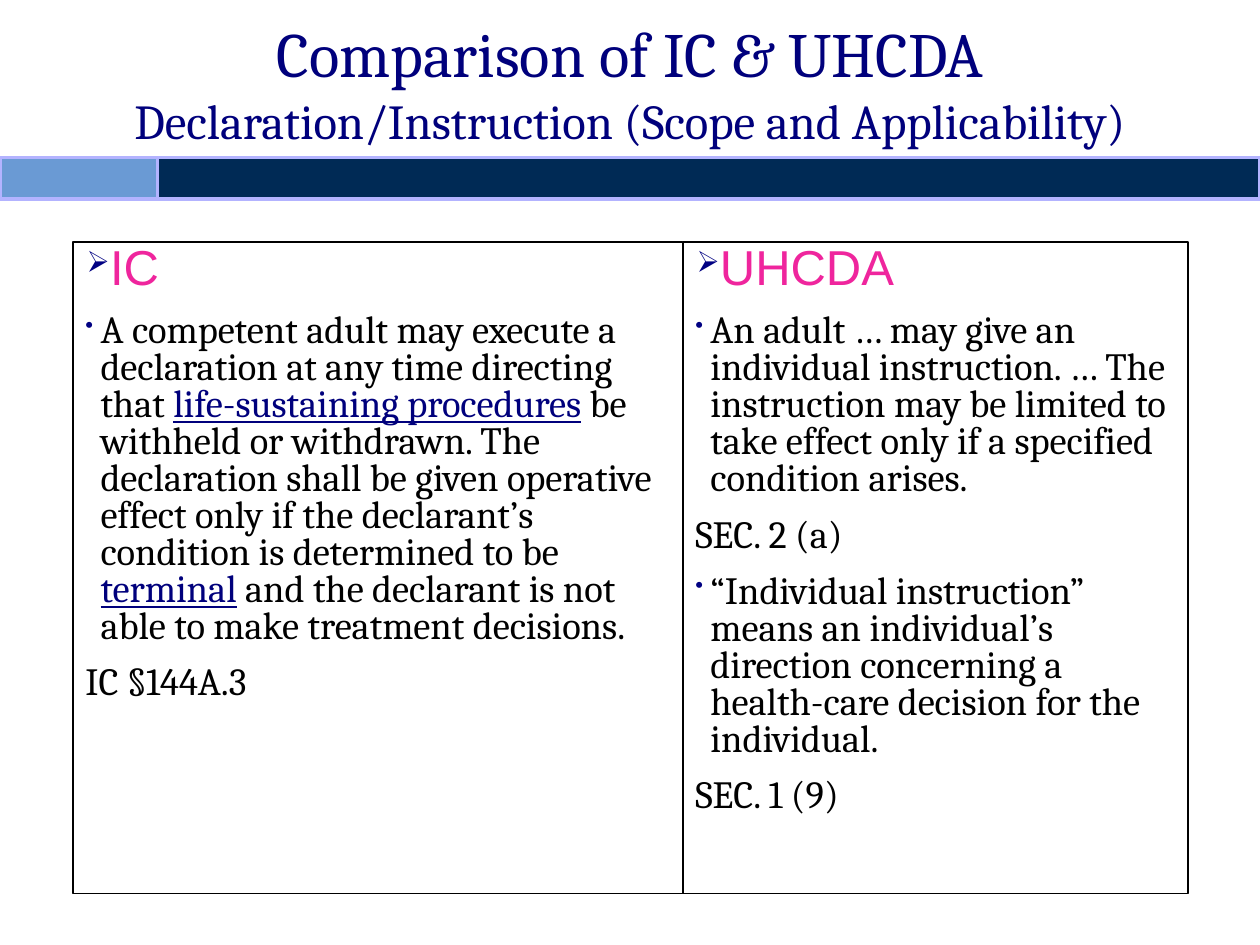
from dataclasses import dataclass
from lxml.etree import SubElement
from pptx import Presentation
from pptx.dml.color import RGBColor
from pptx.enum.shapes import MSO_SHAPE
from pptx.enum.text import MSO_ANCHOR, PP_ALIGN
from pptx.oxml.ns import qn
from pptx.util import Inches, Pt


@dataclass(frozen=True)
class Theme:
    serif: str = "Cambria"
    sans: str = "Arial"
    navy: str = "00007C"
    bullet: str = "000082"
    pink: str = "EF259D"
    black: str = "000000"
    white: str = "FFFFFF"
    band_dark: str = "002A55"
    band_light: str = "6A9AD4"
    band_edge: str = "B3B3FF"
    title_size: float = 36
    subtitle_size: float = 27.9
    heading_size: float = 28
    body_size: float = 22
    paragraph_gap: float = 11
    line_spacing: float = 0.8


class SlideBuilder:
    def __init__(self, slide, theme):
        self.slide = slide
        self.theme = theme

    def format_run(self, run, size, color, font, underline=False):
        run.font.size = Pt(size)
        run.font.name = font
        run.font.color.rgb = RGBColor.from_string(color)
        if underline:
            run.font.underline = True

    def title(self, heading, subheading, left, top, width, height):
        theme = self.theme
        title = self.slide.shapes.title
        title.left, title.top = Inches(left), Inches(top)
        title.width, title.height = Inches(width), Inches(height)
        frame = title.text_frame
        frame.word_wrap = True
        frame.vertical_anchor = MSO_ANCHOR.MIDDLE
        frame.margin_top, frame.margin_bottom = Inches(0), Inches(0.43)
        frame.text = f"{heading}\v{subheading}"
        paragraph = frame.paragraphs[0]
        paragraph.alignment = PP_ALIGN.CENTER
        for run, size in zip(paragraph.runs, (theme.title_size, theme.subtitle_size)):
            self.format_run(run, size, theme.navy, theme.serif)

    def box(self, shapes, left, top, width, height, fill, edge, edge_width):
        box = shapes.add_shape(MSO_SHAPE.RECTANGLE, Inches(left), Inches(top),
                               Inches(width), Inches(height))
        box.shadow.inherit = False
        box.fill.solid()
        box.fill.fore_color.rgb = RGBColor.from_string(fill)
        box.line.color.rgb = RGBColor.from_string(edge)
        box.line.width = Pt(edge_width)
        return box

    def band(self, top, height, split, width):
        theme = self.theme
        shapes = self.slide.shapes.add_group_shape().shapes
        for left, right, fill in ((split, width, theme.band_dark),
                                  (0, split, theme.band_light)):
            self.box(shapes, left, top, right - left, height, fill, theme.band_edge, 2)

    def bullet(self, paragraph, symbol, margin, indent):
        properties = paragraph._p.get_or_add_pPr()
        properties.set("marL", str(Inches(margin)))
        properties.set("indent", str(Inches(indent)))
        color = SubElement(properties, qn("a:buClr"))
        SubElement(color, qn("a:srgbClr")).set("val", self.theme.bullet)
        SubElement(properties, qn("a:buSzPct")).set("val", "60000")
        SubElement(properties, qn("a:buChar")).set("char", symbol)

    def column(self, heading, entries, left, top, width, height):
        theme = self.theme
        column = self.box(self.slide.shapes, left, top, width, height,
                          theme.white, theme.black, 0.75)
        frame = column.text_frame
        frame.word_wrap = True
        frame.vertical_anchor = MSO_ANCHOR.TOP
        header = frame.paragraphs[0]
        header.text = heading
        header.level = 1
        header.alignment = PP_ALIGN.LEFT
        header.line_spacing = theme.line_spacing
        self.bullet(header, "➢", 0.01, 0)
        self.format_run(header.runs[0], theme.heading_size, theme.pink, theme.sans)
        for bulleted, parts in entries:
            entry = frame.add_paragraph()
            entry.alignment = PP_ALIGN.LEFT
            entry.line_spacing = theme.line_spacing
            entry.space_before = Pt(theme.paragraph_gap)
            if bulleted:
                self.bullet(entry, "•", 0.12, -0.12)
            for position, part in enumerate(parts):
                defined_term = position % 2 == 1
                run = entry.add_run()
                run.text = part
                self.format_run(run, theme.body_size,
                                theme.navy if defined_term else theme.black,
                                theme.serif, defined_term)


IC_ENTRIES = [
    (True, ["A competent adult may execute a declaration at any time directing that ",
            "life-sustaining procedures",
            " be withheld or withdrawn. The declaration shall be given operative effect "
            "only if the declarant’s condition is determined to be ",
            "terminal",
            " and the declarant is not able to make treatment decisions."]),
    (False, ["IC §144A.3"]),
]
UHCDA_ENTRIES = [
    (True, ["An adult … may give an individual instruction. … The instruction may be "
            "limited to take effect only if a specified condition arises."]),
    (False, ["SEC. 2 (a)"]),
    (True, ["“Individual instruction” means an individual’s direction concerning a "
            "health-care decision for the individual."]),
    (False, ["SEC. 1 (9)"]),
]


def main():
    presentation = Presentation()
    presentation.slide_width, presentation.slide_height = Inches(10), Inches(7.5)
    slide = presentation.slides.add_slide(presentation.slide_layouts[5])
    builder = SlideBuilder(slide, Theme())
    builder.title("Comparison of IC & UHCDA",
                  "Declaration/Instruction (Scope and Applicability)",
                  0.08, 0.17, 9.84, 1.39)
    left = 0.58
    for heading, entries, width in (("IC", IC_ENTRIES, 4.84),
                                    ("UHCDA", UHCDA_ENTRIES, 4.01)):
        builder.column(heading, entries, left, 1.92, width, 5.17)
        left += width
    builder.band(1.25, 0.33, 1.25, 10)
    presentation.save("out.pptx")


if __name__ == "__main__":
    main()
